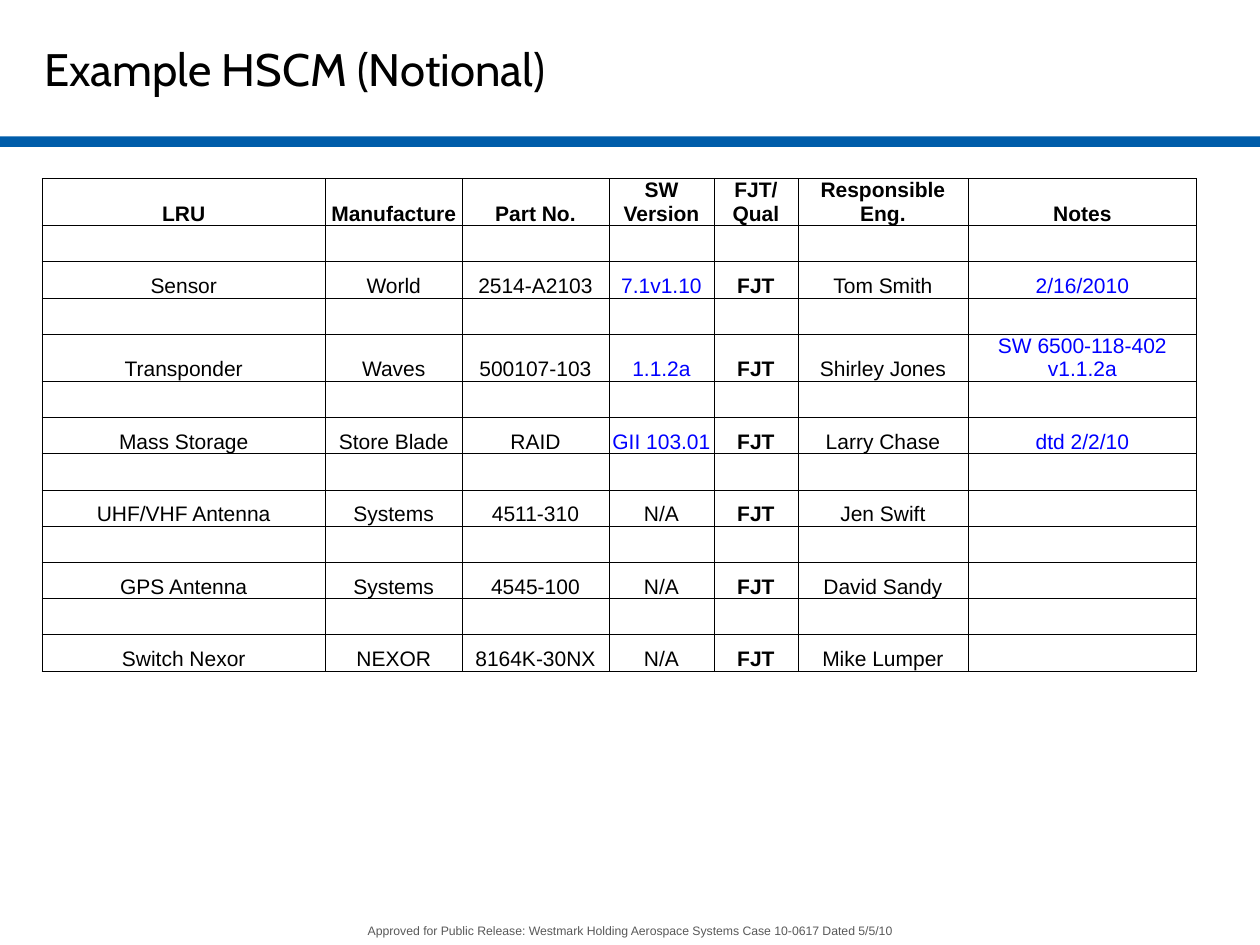
from typing import NamedTuple

import lxml.etree
import pptx
import pptx.dml.color
import pptx.enum.shapes
import pptx.enum.text
import pptx.oxml.ns
import pptx.util

ALIGN = pptx.enum.text.PP_ALIGN
ANCHOR = pptx.enum.text.MSO_ANCHOR
BLACK, BLUE, GREY, BAR_BLUE = "000000", "0000FF", "595959", "005DAA"


class Box(NamedTuple):
    """Left, top, width and height on a grid of 120 columns by 90 rows."""
    left: float
    top: float
    width: float
    height: float


class Unit(NamedTuple):
    lru: str
    maker: str
    part: str
    version: str
    status: str
    engineer: str
    notes: str = ""


TITLE_BOX = Box(3, 1, 88, 11)
BAR_BOX = Box(0, 13, 120, 1)
FOOTER_BOX = Box(0, 87.3, 120, 2.6)
COLUMNS = [27, 13, 14, 10, 8, 16.2, 21.8]
ROW_HEIGHT = 3.45
CELL_SIZE = 12
HEADER = Unit("LRU", "Manufacture", "Part No.", "SW Version", "FJT/Qual",
              "Responsible Eng.", "Notes")
UNITS = [
    Unit("Sensor", "World", "2514-A2103", "7.1v1.10", "FJT", "Tom Smith", "2/16/2010"),
    Unit("Transponder", "Waves", "500107-103", "1.1.2a", "FJT", "Shirley Jones",
         "SW 6500-118-402 v1.1.2a"),
    Unit("Mass Storage", "Store Blade", "RAID", "GII 103.01", "FJT", "Larry Chase",
         "dtd 2/2/10"),
    Unit("UHF/VHF Antenna", "Systems", "4511-310", "N/A", "FJT", "Jen Swift"),
    Unit("GPS Antenna", "Systems", "4545-100", "N/A", "FJT", "David Sandy"),
    Unit("Switch Nexor", "NEXOR", "8164K-30NX", "N/A", "FJT", "Mike Lumper"),
]


def grid(n: float) -> int:
    return pptx.util.Inches(n / 12)


def place(box: Box) -> list[int]:
    return [grid(n) for n in box]


def rgb(color: str) -> pptx.dml.color.RGBColor:
    return pptx.dml.color.RGBColor.from_string(color)


def write(tf, text: str, size: float, color: str = BLACK, name: str = "Arial",
          bold: bool = False, align=ALIGN.CENTER) -> None:
    tf.text = text
    p = tf.paragraphs[0]
    p.alignment = align
    for r in p.runs:
        r.font.size = pptx.util.Pt(size)
        r.font.name = name
        r.font.bold = bold
        r.font.color.rgb = rgb(color)


def set_borders(cell, color: str = BLACK, width: float = 0.5) -> None:
    tc_pr = cell._tc.get_or_add_tcPr()
    for i, side in enumerate(("lnL", "lnR", "lnT", "lnB")):
        ln = lxml.etree.Element(pptx.oxml.ns.qn(f"a:{side}"), w=str(pptx.util.Pt(width)))
        fill = lxml.etree.SubElement(ln, pptx.oxml.ns.qn("a:solidFill"))
        lxml.etree.SubElement(fill, pptx.oxml.ns.qn("a:srgbClr"), val=color)
        tc_pr.insert(i, ln)


def format_cell(cell) -> None:
    """Format an empty cell, with a text size that keeps its row low."""
    cell.margin_left = cell.margin_right = cell.margin_top = cell.margin_bottom = 0
    cell.vertical_anchor = ANCHOR.BOTTOM
    cell.fill.background()
    set_borders(cell)
    p = cell.text_frame.paragraphs[0]
    lxml.etree.SubElement(p._p, pptx.oxml.ns.qn("a:endParaRPr"), sz=str(CELL_SIZE * 100))


def text_color(unit: Unit, field: str) -> str:
    """Versions and notes are blue, apart from the header and N/A."""
    marked = field in ("version", "notes") and unit is not HEADER
    return BLUE if marked and getattr(unit, field) != "N/A" else BLACK


def add_title(s) -> None:
    title = s.shapes.title
    title.left, title.top, title.width, title.height = place(TITLE_BOX)
    title.text_frame.vertical_anchor = ANCHOR.MIDDLE
    write(title.text_frame, "Example HSCM (Notional)", 26, name="Cabin", align=ALIGN.LEFT)


def add_bar(s) -> None:
    bar = s.shapes.add_shape(pptx.enum.shapes.MSO_SHAPE.RECTANGLE, *place(BAR_BOX))
    bar.shadow.inherit = False
    bar.fill.solid()
    bar.fill.fore_color.rgb = rgb(BAR_BLUE)
    bar.line.fill.background()


def add_unit_table(s) -> None:
    """Header and units, with an empty row between each pair."""
    units = [HEADER, *UNITS]
    count = 2 * len(units) - 1
    box = Box(4, 17, sum(COLUMNS), ROW_HEIGHT * count)
    table = s.shapes.add_table(count, len(COLUMNS), *place(box)).table
    table.first_row = table.horz_banding = False
    for column, width in zip(table.columns, COLUMNS):
        column.width = grid(width)
    for row in table.rows:
        row.height = grid(ROW_HEIGHT)
    for cell in table.iter_cells():
        format_cell(cell)
    for i, unit in enumerate(units):
        for j, field in enumerate(Unit._fields):
            text = getattr(unit, field)
            if text:
                write(table.cell(2 * i, j).text_frame, text, CELL_SIZE,
                      text_color(unit, field), bold=unit is HEADER or field == "status")


def add_footer(s) -> None:
    tf = s.shapes.add_textbox(*place(FOOTER_BOX)).text_frame
    tf.word_wrap = True
    write(tf, "Approved for Public Release: Westmark Holding Aerospace Systems "
              "Case 10-0617 Dated 5/5/10", 7, GREY)


def main() -> None:
    prs = pptx.Presentation()
    prs.slide_width, prs.slide_height = grid(120), grid(90)
    s = prs.slides.add_slide(prs.slide_layouts.get_by_name("Title Only"))
    add_bar(s)
    add_title(s)
    add_unit_table(s)
    add_footer(s)
    prs.save("out.pptx")


if __name__ == "__main__":
    main()
